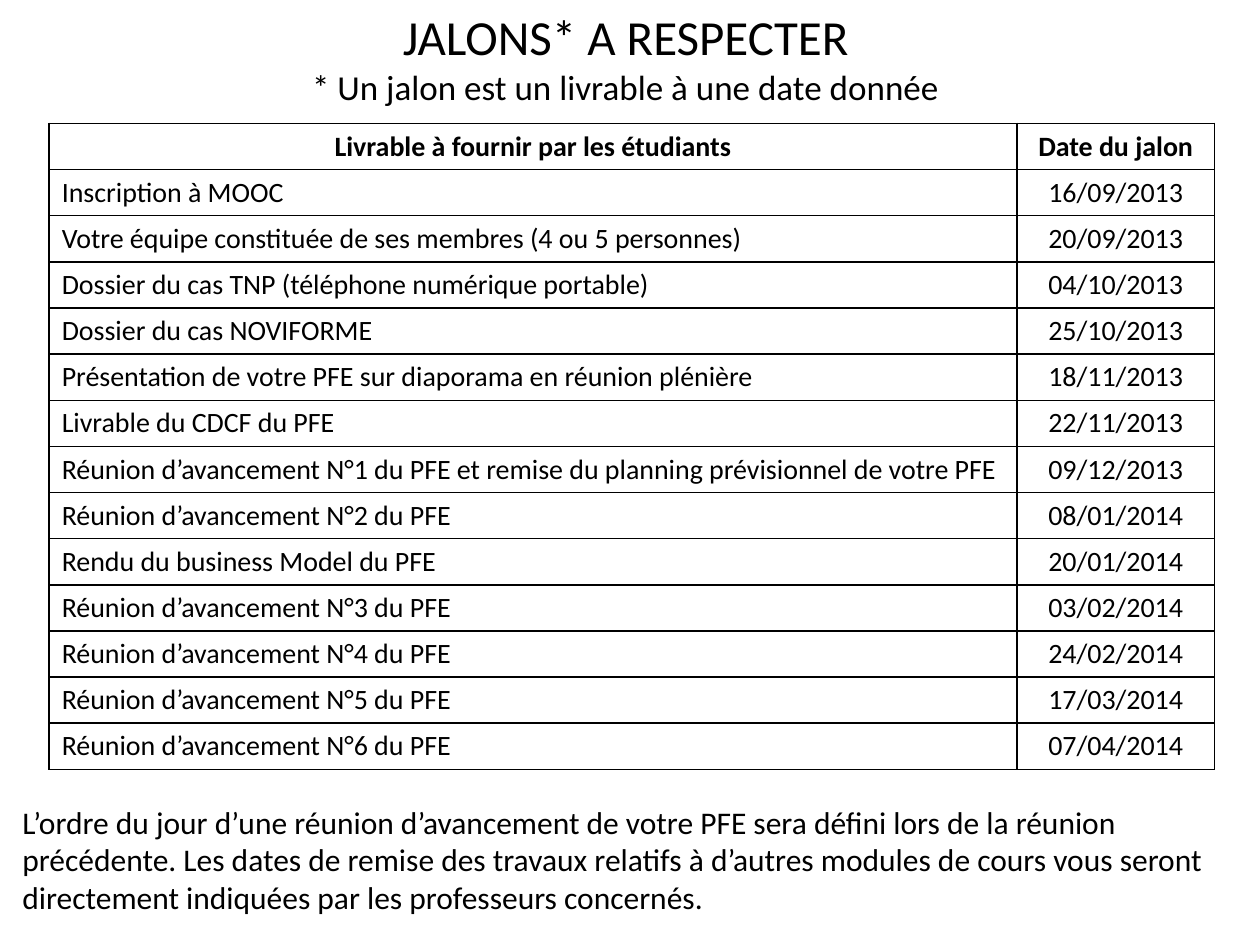
import pptx
import pptx.dml.color
import pptx.enum.text
import pptx.oxml
import pptx.oxml.ns
import pptx.util

Inches = pptx.util.Inches
Pt = pptx.util.Pt
LEFT = pptx.enum.text.PP_ALIGN.LEFT
CENTER = pptx.enum.text.PP_ALIGN.CENTER
MIDDLE = pptx.enum.text.MSO_ANCHOR.MIDDLE

# Content
COLORS = {"text": "000000", "border": "000000", "background": "FFFFFF"}
FONT = "Calibri"

HEADING = [("JALONS* A RESPECTER", 28), ("* Un jalon est un livrable à une date donnée", 20)]
NOTE = [
    ("L’ordre du jour d’une réunion d’avancement de votre PFE sera défini lors de la réunion", 18),
    ("précédente. Les dates de remise des travaux relatifs à d’autres modules de cours vous seront", 18),
    ("directement indiquées par les professeurs concernés.", 18),
]
MILESTONES = [
    ("Livrable à fournir par les étudiants", "Date du jalon"),
    ("Inscription à MOOC", "16/09/2013"),
    ("Votre équipe constituée de ses membres (4 ou 5 personnes)", "20/09/2013"),
    ("Dossier du cas TNP (téléphone numérique portable)", "04/10/2013"),
    ("Dossier du cas NOVIFORME", "25/10/2013"),
    ("Présentation de votre PFE sur diaporama en réunion plénière", "18/11/2013"),
    ("Livrable du CDCF du PFE", "22/11/2013"),
    ("Réunion d’avancement N°1 du PFE et remise du planning prévisionnel de votre PFE", "09/12/2013"),
    ("Réunion d’avancement N°2 du PFE", "08/01/2014"),
    ("Rendu du business Model du PFE", "20/01/2014"),
    ("Réunion d’avancement N°3 du PFE", "03/02/2014"),
    ("Réunion d’avancement N°4 du PFE", "24/02/2014"),
    ("Réunion d’avancement N°5 du PFE", "17/03/2014"),
    ("Réunion d’avancement N°6 du PFE", "07/04/2014"),
]

# Layout in inches: left, top, width, height
HEADING_BOX = (2.35, 0, 5.23, 0.91)
TABLE_BOX = (0.39, 0.98, 9.25, 5.13)
NOTE_BOX = (0.08, 6.32, 9.74, 1.01)
COLUMN_WIDTHS = (7.68, 1.57)


def rgb(name):
    return pptx.dml.color.RGBColor.from_string(COLORS[name])


def write(paragraph, text, size, alignment, bold=False):
    paragraph.alignment = alignment
    run = paragraph.add_run()
    run.text = text
    formats = {"name": FONT, "size": Pt(size), "bold": bold}
    for attribute, value in formats.items():
        setattr(run.font, attribute, value)
    run.font.color.rgb = rgb("text")


def add_text(slide, box, lines, alignment):
    frame = slide.shapes.add_textbox(*map(Inches, box)).text_frame
    frame.word_wrap = False
    for index, (text, size) in enumerate(lines):
        paragraph = frame.add_paragraph() if index else frame.paragraphs[0]
        write(paragraph, text, size, alignment)


def add_borders(cell):
    properties = cell._tc.get_or_add_tcPr()
    for position, side in enumerate(("lnL", "lnR", "lnT", "lnB")):
        line = pptx.oxml.parse_xml(
            f'<a:{side} {pptx.oxml.ns.nsdecls("a")} w="{Pt(1)}"><a:solidFill>'
            f'<a:srgbClr val="{COLORS["border"]}"/></a:solidFill></a:{side}>')
        properties.insert(position, line)


def add_milestones(slide):
    left, top, width, height = map(Inches, TABLE_BOX)
    table = slide.shapes.add_table(
        len(MILESTONES), len(COLUMN_WIDTHS), left, top, width, height).table
    table.first_row = table.horz_banding = False
    for column, column_width in zip(table.columns, COLUMN_WIDTHS):
        column.width = Inches(column_width)
    cell_formats = {
        "vertical_anchor": MIDDLE,
        "margin_top": Inches(0.04),
        "margin_bottom": Inches(0.04),
    }
    for row_index, milestone in enumerate(MILESTONES):
        table.rows[row_index].height = height // len(MILESTONES)
        header = row_index == 0
        for column_index, text in enumerate(milestone):
            cell = table.cell(row_index, column_index)
            for attribute, value in cell_formats.items():
                setattr(cell, attribute, value)
            cell.fill.solid()
            cell.fill.fore_color.rgb = rgb("background")
            add_borders(cell)
            alignment = CENTER if header or column_index else LEFT
            write(cell.text_frame.paragraphs[0], text, 16, alignment, header)


def main():
    presentation = pptx.Presentation()
    presentation.slide_width = Inches(10)
    presentation.slide_height = Inches(7.5)
    slide = presentation.slides.add_slide(presentation.slide_layouts[6])

    # Table, closing note, heading
    add_milestones(slide)
    add_text(slide, NOTE_BOX, NOTE, LEFT)
    add_text(slide, HEADING_BOX, HEADING, CENTER)
    presentation.save("out.pptx")


if __name__ == "__main__":
    main()
